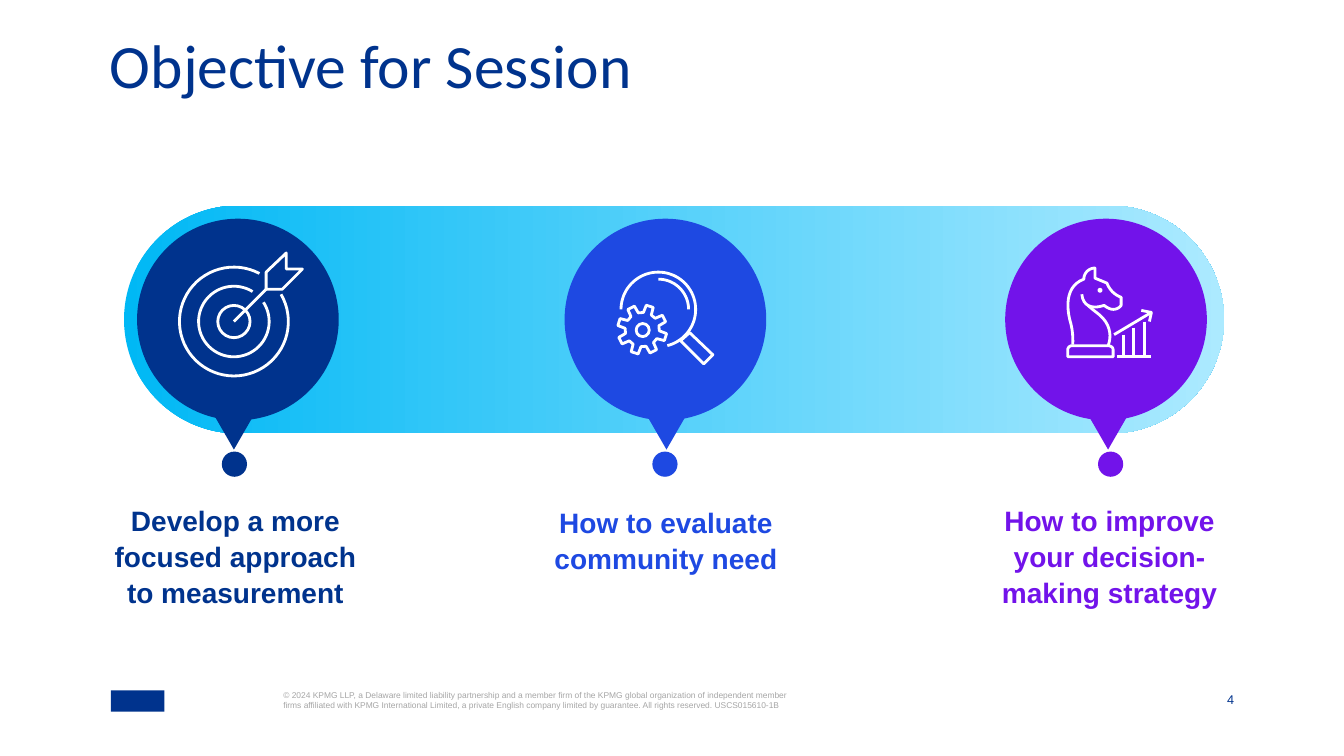
from dataclasses import dataclass
from math import cos, radians, sin

from lxml import etree
from pptx import Presentation
from pptx.dml.color import RGBColor
from pptx.enum.shapes import MSO_CONNECTOR, MSO_SHAPE
from pptx.enum.text import MSO_ANCHOR, MSO_AUTO_SIZE, PP_ALIGN
from pptx.oxml.ns import qn
from pptx.util import Inches, Pt

LEFT, CENTER, RIGHT = PP_ALIGN.LEFT, PP_ALIGN.CENTER, PP_ALIGN.RIGHT
TOP, BOTTOM = MSO_ANCHOR.TOP, MSO_ANCHOR.BOTTOM
ELLIPSE, TRIANGLE = MSO_SHAPE.OVAL, MSO_SHAPE.ISOSCELES_TRIANGLE
RECTANGLE, PILL = MSO_SHAPE.RECTANGLE, MSO_SHAPE.ROUNDED_RECTANGLE
STRAIGHT = MSO_CONNECTOR.STRAIGHT
TITLE_ONLY = 5


@dataclass(frozen=True)
class Theme:
    navy: str = "00338D"
    blue: str = "1E49E2"
    purple: str = "7213EA"
    band_start: str = "00B8F5"
    band_end: str = "ACEAFF"
    white: str = "FFFFFF"
    grey: str = "A6A6A6"
    heading_font: str = "Calibri"
    body_font: str = "Arial"
    title_size: int = 44
    label_size: int = 20
    number_size: int = 9
    legal_size: int = 6
    icon_line: int = 2


THEME = Theme()

# Pin colour, left edges of disc, pointer, dot and label, label top and width, label
PINS = [
    (THEME.navy, 1.36, 2.13, 2.2, 1.13, 4.98, 2.41,
     "Develop a more focused approach to measurement"),
    (THEME.blue, 5.6, 6.42, 6.47, 5.29, 5, 2.63,
     "How to evaluate community need"),
    (THEME.purple, 9.97, 10.8, 10.89, 9.8, 4.98, 2.41,
     "How to improve your decision-making strategy"),
]
LEGAL = ("© 2024 KPMG LLP, a Delaware limited liability partnership and a member firm of "
         "the KPMG global organization of independent member firms affiliated with KPMG "
         "International Limited, a private English company limited by guarantee. "
         "All rights reserved. USCS015610-1B")


# Text
def write(box, text, *, size, color, font=THEME.body_font, bold=False,
          align=LEFT, anchor=TOP, spacing=1.0):
    frame = box.text_frame
    frame.word_wrap = True
    frame.auto_size = MSO_AUTO_SIZE.NONE
    frame.vertical_anchor = anchor
    frame.margin_left = frame.margin_right = 0
    frame.margin_top = frame.margin_bottom = 0
    para = frame.paragraphs[0]
    para.alignment = align
    para.line_spacing = spacing
    span = para.add_run()
    span.text = text
    span.font.name = font
    span.font.size = Pt(size)
    span.font.bold = bold
    span.font.color.rgb = RGBColor.from_string(color)


def add_text(page, area, text, **style):
    box = page.shapes.add_textbox(*map(Inches, area))
    write(box, text, **style)


# Shapes and strokes
def add_solid(page, kind, area, color, rotation=0):
    shape = page.shapes.add_shape(kind, *map(Inches, area))
    shape.shadow.inherit = False
    shape.fill.solid()
    shape.fill.fore_color.rgb = RGBColor.from_string(color)
    shape.line.fill.background()
    shape.rotation = rotation
    return shape


def style_stroke(line):
    line.color.rgb = RGBColor.from_string(THEME.white)
    line.width = Pt(THEME.icon_line)


def add_stroke(page, points, close=False):
    start, *rest = [(Inches(x), Inches(y)) for x, y in points]
    builder = page.shapes.build_freeform(*start)
    builder.add_line_segments(rest, close=close)
    outline = builder.convert_to_shape()
    outline.shadow.inherit = False
    outline.fill.background()
    style_stroke(outline.line)


def add_line(page, *ends):
    connector = page.shapes.add_connector(STRAIGHT, *map(Inches, ends))
    style_stroke(connector.line)
    properties = connector._element.find(qn("p:spPr"))
    etree.SubElement(properties, qn("a:effectLst"))


def add_ring(page, x, y, diameter):
    ring = add_solid(page, ELLIPSE, (x, y, diameter, diameter), THEME.white)
    ring.fill.background()
    style_stroke(ring.line)


# Point lists
def polar(x, y, radius, angle):
    return x + radius * cos(radians(angle)), y + radius * sin(radians(angle))


def arc(x, y, radius, start, end, steps=60):
    return [polar(x, y, radius, start + (end - start) * i / steps)
            for i in range(steps + 1)]


def trace(start, *moves, steps=12):
    """Points along straight moves (x, y) and cubic moves (x1, y1, x2, y2, x, y)."""
    points = [start]
    for move in moves:
        if len(move) == 2:
            points.append(move)
            continue
        knots = [points[-1], move[:2], move[2:4], move[4:]]
        for i in range(1, steps + 1):
            t = i / steps
            weights = ((1 - t) ** 3, 3 * t * (1 - t) ** 2, 3 * t * t * (1 - t), t ** 3)
            points.append(tuple(sum(w * knot[axis] for w, knot in zip(weights, knots))
                                for axis in (0, 1)))
    return points


def gear(x, y, tip, root, teeth=8, first=18, half=8.5):
    pitch = 360 / teeth
    return [polar(x, y, radius, first + pitch * (tooth + shift) + side)
            for tooth in range(teeth)
            for radius, shift in ((tip, 0), (root, 0.5))
            for side in (-half, half)]


# Icons
def draw_target(page):
    add_stroke(page, arc(2.32, 3.19, 0.54, -30, 298))
    add_stroke(page, arc(2.32, 3.19, 0.35, -33, 302))
    add_ring(page, 2.16, 3.03, 0.32)
    add_stroke(page, [(2.84, 2.51), (2.84, 2.67), (3, 2.67), (2.8, 2.87),
                      (2.64, 2.87), (2.64, 2.7)], close=True)
    add_line(page, 2.64, 2.87, 2.32, 3.19)


def draw_magnifier(page):
    add_stroke(page, [(7.07, 3.52), (6.98, 3.61), (6.75, 3.38), (6.84, 3.3)], close=True)
    add_stroke(page, arc(6.53, 3.07, 0.37, 180, 436))
    add_stroke(page, arc(6.53, 3.07, 0.3, 270, 360))
    add_stroke(page, gear(6.37, 3.27, 0.245, 0.17), close=True)
    add_ring(page, 6.31, 3.21, 0.13)


def draw_knight(page):
    base = trace((11.04, 3.54), (10.59, 3.54), (10.59, 3.47),
                 (10.59, 3.45, 10.61, 3.43, 10.63, 3.43), (10.99, 3.43),
                 (11.02, 3.43, 11.04, 3.45, 11.04, 3.47))
    add_stroke(page, base, close=True)
    head = trace((10.64, 3.42), (10.64, 3.4, 10.65, 3.3, 10.61, 3.17),
                 (10.57, 3, 10.59, 2.83, 10.75, 2.77),
                 (10.75, 2.71, 10.8, 2.66, 10.86, 2.66), (10.86, 2.76), (10.98, 2.81),
                 (10.98, 2.81, 11.01, 2.91, 11.12, 2.95), (11.12, 3.03),
                 (11.12, 3.03, 11.06, 3.12, 10.95, 3.03),
                 (10.95, 3.03, 10.75, 3.11, 10.73, 2.92))
    add_stroke(page, head)
    add_stroke(page, trace((10.99, 3.43), (10.99, 3.43, 11.07, 3.26, 10.9, 3.12),
                           (10.9, 3.12, 10.81, 3.05, 10.79, 3.03)))
    add_ring(page, 10.9, 2.87, 0.02)
    # Growth chart beside the knight
    add_line(page, 11.08, 3.54, 11.42, 3.54)
    add_stroke(page, [(11.05, 3.32), (11.42, 3.1), (11.32, 3.08)])
    add_line(page, 11.4, 3.19, 11.42, 3.1)
    for x, top in ((11.14, 3.32), (11.24, 3.25), (11.35, 3.19)):
        add_line(page, x, top, x, 3.54)


# Slide parts
def add_band(page):
    band = add_solid(page, PILL, (1.23, 2.04, 10.91, 2.26), THEME.band_start)
    band.adjustments[0] = 0.5
    band.fill.gradient()
    band.fill.gradient_angle = 0
    for stop, color in zip(band.fill.gradient_stops, (THEME.band_start, THEME.band_end)):
        stop.color.rgb = RGBColor.from_string(color)


def add_pin(page, color, disc, pointer, dot, label, label_top, width, text):
    add_solid(page, ELLIPSE, (disc, 2.17, 2, 2), color)
    add_solid(page, TRIANGLE, (pointer, 4.13, 0.38, 0.33), color, rotation=180)
    add_solid(page, ELLIPSE, (dot, 4.48, 0.25, 0.25), color)
    add_text(page, (label, label_top, width, 0.94), text, size=THEME.label_size,
             color=color, bold=True, align=CENTER, spacing=1.06)


def add_footer(page):
    add_solid(page, RECTANGLE, (1.1, 6.85, 0.53, 0.21), THEME.navy)
    add_text(page, (2.81, 6.85, 5.1, 0.2), LEGAL, size=THEME.legal_size, color=THEME.grey)
    add_text(page, (11.97, 6.85, 0.27, 0.16), "4", size=THEME.number_size,
             color=THEME.navy, align=RIGHT, anchor=BOTTOM)


def main():
    deck = Presentation()
    deck.slide_width, deck.slide_height = Inches(13.33), Inches(7.5)
    page = deck.slides.add_slide(deck.slide_layouts[TITLE_ONLY])
    title = page.shapes.title
    title.left, title.top, title.width, title.height = map(Inches, (1.09, 0.47, 11.16, 0.58))
    write(title, "Objective for Session", size=THEME.title_size, color=THEME.navy,
          font=THEME.heading_font, spacing=0.7)
    add_band(page)
    for pin in PINS:
        add_pin(page, *pin)
    for draw_icon in (draw_target, draw_magnifier, draw_knight):
        draw_icon(page)
    add_footer(page)
    deck.save("out.pptx")


if __name__ == "__main__":
    main()
